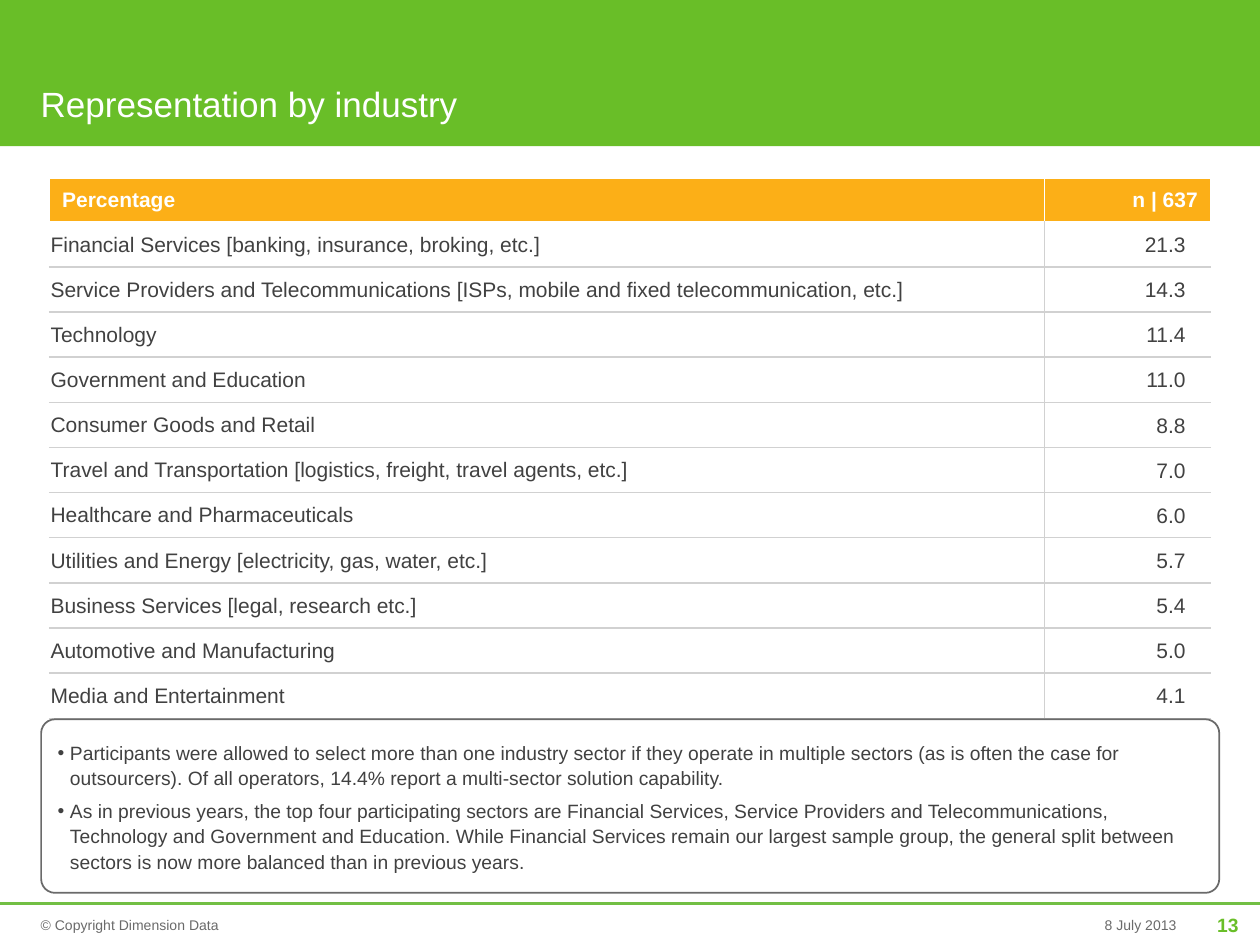
from lxml.etree import SubElement
from pptx import Presentation
from pptx.dml.color import RGBColor
from pptx.enum.shapes import MSO_CONNECTOR, MSO_SHAPE
from pptx.enum.text import MSO_ANCHOR as Anchor, PP_ALIGN as Align
from pptx.oxml.ns import qn
from pptx.util import Cm, Pt

FONT = "Arial"
GREEN = RGBColor(0x69, 0xBE, 0x28)
LINE_GREEN = RGBColor(0x72, 0xBF, 0x44)
ORANGE = RGBColor(0xFC, 0xAF, 0x17)
WHITE = RGBColor(0xFF, 0xFF, 0xFF)
DARK = RGBColor(0x41, 0x41, 0x41)
GREY = RGBColor(0x6A, 0x6A, 0x6A)
RULE_GREY = RGBColor(0xD1, 0xD1, 0xD1)

HEADER = ("Percentage", "n | 637")
INDUSTRIES = [
    ("Financial Services [banking, insurance, broking, etc.]", "21.3"),
    ("Service Providers and Telecommunications "
     "[ISPs, mobile and fixed telecommunication, etc.]", "14.3"),
    ("Technology", "11.4"),
    ("Government and Education", "11.0"),
    ("Consumer Goods and Retail", "8.8"),
    ("Travel and Transportation [logistics, freight, travel agents, etc.]", "7.0"),
    ("Healthcare and Pharmaceuticals", "6.0"),
    ("Utilities and Energy [electricity, gas, water, etc.]", "5.7"),
    ("Business Services [legal, research etc.]", "5.4"),
    ("Automotive and Manufacturing", "5.0"),
    ("Media and Entertainment", "4.1"),
]
REMARKS = [
    "Participants were allowed to select more than one industry sector if they "
    "operate in multiple sectors (as is often the case for outsourcers). Of all "
    "operators, 14.4% report a multi-sector solution capability.",
    "As in previous years, the top four participating sectors are Financial "
    "Services, Service Providers and Telecommunications, Technology and Government "
    "and Education. While Financial Services remain our largest sample group, the "
    "general split between sectors is now more balanced than in previous years.",
]


def add_run(para, text, size, color, bold=False):
    run = para.add_run()
    run.text = text
    font = run.font
    font.name, font.size, font.bold = FONT, Pt(size), bold
    font.color.rgb = color


def set_insets(holder, left, top, right, bottom):
    """Set the inner margins, in centimetres, of a text frame or a table cell."""
    holder.margin_left, holder.margin_top = Cm(left), Cm(top)
    holder.margin_right, holder.margin_bottom = Cm(right), Cm(bottom)


def place(shape, left, top, width, height):
    shape.left, shape.top = Cm(left), Cm(top)
    shape.width, shape.height = Cm(width), Cm(height)


def add_band(slide, width):
    band = slide.shapes.add_shape(MSO_SHAPE.RECTANGLE, 0, 0, width, Cm(2.95))
    band.shadow.inherit = False
    band.fill.solid()
    band.fill.fore_color.rgb = GREEN
    band.line.fill.background()


def add_title(slide, text):
    title = slide.shapes.title
    place(title, 0.82, 0.2, 17.8, 2.31)
    slide.shapes._spTree.append(title._element)  # in front of the band
    frame = title.text_frame
    frame.word_wrap = True
    frame.vertical_anchor = Anchor.BOTTOM
    set_insets(frame, 0, 0, 0, 0)
    para = frame.paragraphs[0]
    para.alignment = Align.LEFT
    para.line_spacing, para.space_before, para.space_after = 1.2, Pt(0), Pt(2)
    add_run(para, text, 20, WHITE)


def add_footer_rule(slide, width):
    rule = slide.shapes.add_connector(
        MSO_CONNECTOR.STRAIGHT, 0, Cm(18.21), width, Cm(18.21))
    rule.line.color.rgb = LINE_GREEN
    rule.line.width = Pt(1.5)
    SubElement(rule._element.spPr, qn("a:effectLst"))


def add_footer_text(slide, text, left, width, align, size=8, color=GREY, bold=False):
    box = slide.shapes.add_textbox(Cm(left), Cm(18.21), Cm(width), Cm(0.84))
    frame = box.text_frame
    frame.word_wrap = True
    frame.vertical_anchor = Anchor.MIDDLE
    set_insets(frame, 0, 0, 0, 0)
    para = frame.paragraphs[0]
    para.alignment, para.line_spacing = align, 1.1
    add_run(para, text, size, color, bold)


def set_borders(cell, **colors):
    """Draw 1 pt borders; sides are named L, R, T and B, given in that order."""
    properties = cell._tc.get_or_add_tcPr()
    for side, color in colors.items():
        line = SubElement(properties, qn(f"a:ln{side}"), w=str(Pt(1)))
        fill = SubElement(line, qn("a:solidFill"))
        SubElement(fill, qn("a:srgbClr"), val=str(color))


def fill_cell(cell, text, fill, color, align, anchor, bold=False):
    cell.fill.solid()
    cell.fill.fore_color.rgb = fill
    cell.vertical_anchor = anchor
    para = cell.text_frame.paragraphs[0]
    para.alignment = align
    add_run(para, text, 12, color, bold)


def add_industry_table(slide):
    widths, header_height, row_height = (20.06, 3.34), 0.87, 0.91
    row_count = len(INDUSTRIES) + 1
    table = slide.shapes.add_table(
        row_count, 2, Cm(1), Cm(3.6), Cm(sum(widths)),
        Cm(header_height + row_height * len(INDUSTRIES))).table
    table.horz_banding = False
    for column, width in zip(table.columns, widths):
        column.width = Cm(width)
    for row in table.rows:
        row.height = Cm(row_height)
    table.rows[0].height = Cm(header_height)

    for index, (text, align) in enumerate(zip(HEADER, (Align.LEFT, Align.RIGHT))):
        cell = table.cell(0, index)
        set_borders(cell, L=WHITE, R=WHITE, T=WHITE, B=WHITE)
        fill_cell(cell, text, ORANGE, WHITE, align, Anchor.MIDDLE, bold=True)

    for index, (industry, share) in enumerate(INDUSTRIES, start=1):
        top = WHITE if index == 1 else RULE_GREY
        name_cell, share_cell = table.cell(index, 0), table.cell(index, 1)
        set_borders(name_cell, R=RULE_GREY, T=top, B=RULE_GREY)
        set_insets(name_cell, 0.02, 0.02, 0.02, 0)
        fill_cell(name_cell, industry, WHITE, DARK, Align.LEFT, Anchor.MIDDLE)
        set_borders(share_cell, L=RULE_GREY, T=top, B=RULE_GREY)
        set_insets(share_cell, 0, 0.1, 0.5, 0.2)
        fill_cell(share_cell, share, WHITE, DARK, Align.RIGHT, Anchor.BOTTOM)


def add_bullet(para, indent):
    properties = para._p.get_or_add_pPr()
    properties.set("marL", str(Cm(indent)))
    properties.set("indent", str(-Cm(indent)))
    SubElement(properties, qn("a:buFont"), typeface=FONT)
    SubElement(properties, qn("a:buChar"), char="•")


def add_remarks_box(slide):
    box = slide.shapes.add_shape(
        MSO_SHAPE.ROUNDED_RECTANGLE, Cm(0.83), Cm(14.5), Cm(23.75), Cm(3.5))
    box.adjustments[0] = 0.08
    box.shadow.inherit = False
    box.fill.solid()
    box.fill.fore_color.rgb = WHITE
    box.line.color.rgb = GREY
    box.line.width = Pt(1)
    frame = box.text_frame
    frame.word_wrap = True
    frame.vertical_anchor = Anchor.MIDDLE
    for index, remark in enumerate(REMARKS):
        para = frame.add_paragraph() if index else frame.paragraphs[0]
        add_bullet(para, 0.25)
        para.alignment, para.line_spacing = Align.LEFT, 1.1
        para.space_before, para.space_after = Pt(2 if index else 0), Pt(2)
        add_run(para, remark, 11, DARK)


def main():
    deck = Presentation()
    deck.slide_width, deck.slide_height = Cm(25.4), Cm(19.05)
    slide = deck.slides.add_slide(deck.slide_layouts[5])
    add_footer_text(slide, "© Copyright Dimension Data", 0.82, 11.88, Align.LEFT)
    add_footer_text(slide, "13", 23.93, 1.04, Align.RIGHT, 11, GREEN, bold=True)
    add_footer_text(slide, "8 July 2013", 19.05, 4.67, Align.RIGHT)
    add_band(slide, deck.slide_width)
    add_footer_rule(slide, deck.slide_width)
    add_title(slide, "Representation by industry")
    add_industry_table(slide)
    add_remarks_box(slide)
    deck.save("out.pptx")


if __name__ == "__main__":
    main()
